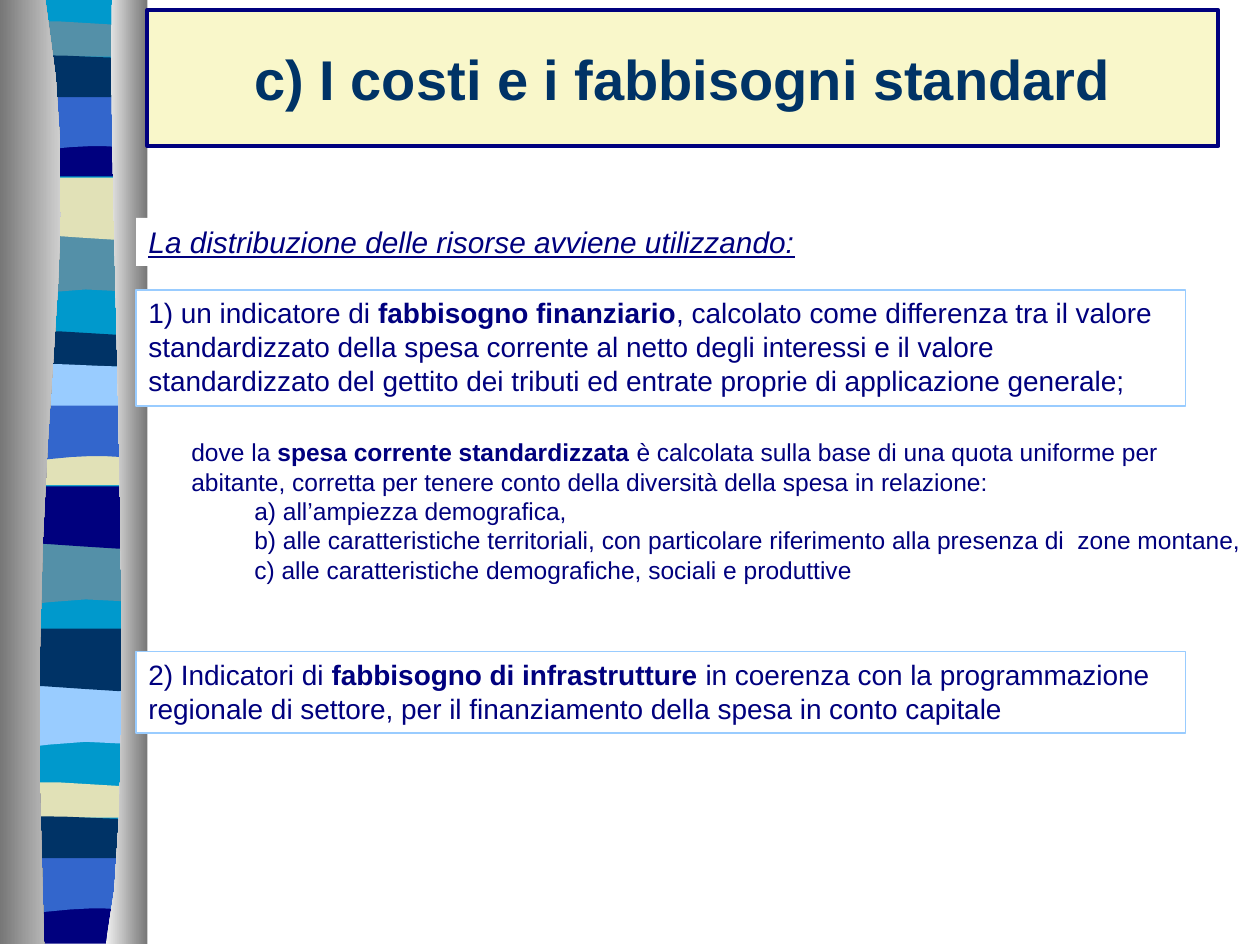
from pptx import Presentation
from pptx.dml.color import RGBColor
from pptx.enum.text import MSO_ANCHOR as Anchor, MSO_AUTO_SIZE as AutoSize, PP_ALIGN as Align
from pptx.util import Inches, Pt

NAVY, DEEP, BLUE, SKY = "00007E", "003366", "3366CC", "99CCFF"
TEAL, SAND, CYAN = "5490A8", "E1E1B7", "0099CC"
WHITE, CREAM = "FFFFFF", "F9F7CA"
DARK_GREY, LIGHT_GREY, PALE_GREY = "777777", "CFCFCF", "F0F0F0"

LEFT, RIGHT = 0.05, 1.14
BOWL_TOP = (0.72, 0.05, 0.91, 0, RIGHT, 0)
WAVES = {
    "sag": [(RIGHT, 0.47), (0.39, 0.39, 0.24, 0.55, LEFT, 0.47), (LEFT, 0)],
    "roll": [(RIGHT, 0.47), (0.96, 0.55, 0.39, 0.41, LEFT, 0.47), (LEFT, 0)],
    "cap": [(RIGHT, 0.24), (LEFT, 0.24), (LEFT, 0),
            (0.12, -0.05, 0.29, -0.04, 0.47, -0.04), (RIGHT, 0)],
    "bowl": [(RIGHT, 0.32), (LEFT, 0.32), (LEFT, 0), BOWL_TOP],
    "arch": [(RIGHT, 0.47), (0.97, 0.42, 0.9, 0.42, 0.72, 0.42),
             (0.54, 0.42, 0.22, 0.47, LEFT, 0.47), (LEFT, 0)],
    "drift": [(RIGHT, 0.31), (LEFT, 0.31), (LEFT, 0),
              (0.21, -0.05, 0.79, 0, 0.97, 0), (RIGHT, 0)],
    "base": [(RIGHT, 0.37), (LEFT, 0.37), (LEFT, 0), BOWL_TOP],
    "backing": [(RIGHT, 7.47), (LEFT, 7.47), (LEFT, 0)],
}
BANDS = [
    ("backing", 0, CYAN),
    ("sag", 1.85, TEAL), ("roll", 1.41, SAND), ("cap", 0.21, TEAL),
    ("bowl", 1.08, NAVY), ("arch", 0.74, BLUE), ("drift", 0.46, DEEP),
    ("sag", 4.31, TEAL), ("roll", 3.86, NAVY), ("cap", 2.67, DEEP),
    ("bowl", 3.53, SAND), ("arch", 3.2, BLUE), ("drift", 2.91, SKY),
    ("sag", 5.44, SKY), ("roll", 4.99, DEEP), ("cap", 6.25, SAND),
    ("base", 7.12, NAVY), ("arch", 6.79, BLUE), ("drift", 6.5, DEEP),
]


def color(hex_code):
    return RGBColor.from_string(hex_code)


def write(para, text, size=16, hue=NAVY, bold=False, italic=False, underline=False):
    span = para.add_run()
    span.text = text
    font = span.font
    font.name, font.size, font.color.rgb = "Arial", Pt(size), color(hue)
    font.bold, font.italic, font.underline = bold, italic, underline


def trace(start, segments, steps):
    points = [start]
    for segment in segments:
        if len(segment) == 2:
            points.append(segment)
            continue
        x0, y0 = points[-1]
        x1, y1, x2, y2, x3, y3 = segment
        for step in range(1, steps + 1):
            t = step / steps
            s = 1 - t
            a, b, c, d = s ** 3, 3 * s * s * t, 3 * s * t * t, t ** 3
            points.append((a * x0 + b * x1 + c * x2 + d * x3,
                           a * y0 + b * y1 + c * y2 + d * y3))
    return points


class Slide:
    def __init__(self, deck):
        self.page = deck.slides.add_slide(deck.slide_layouts[5])

    def outline(self, start, segments, top=0, steps=4):
        points = [(Inches(x), Inches(y + top)) for x, y in trace(start, segments, steps)]
        builder = self.page.shapes.build_freeform(*points[0], scale=1.0)
        builder.add_line_segments(points[1:], close=True)
        shape = builder.convert_to_shape()
        shape.shadow.inherit = False
        shape.line.fill.background()
        return shape

    def band(self, wave, top, hue):
        shape = self.outline((RIGHT, 0), WAVES[wave], top)
        self.paint(shape, hue)

    def pillar(self, start, segments, hues):
        fill = self.outline(start, segments, steps=10).fill
        fill.gradient()
        fill.gradient_angle = 0
        for stop, hue in zip(fill.gradient_stops, hues):
            stop.color.rgb = color(hue)

    def paint(self, shape, hue, line=None, width=1):
        shape.fill.solid()
        shape.fill.fore_color.rgb = color(hue)
        if line:
            shape.line.color.rgb = color(line)
            shape.line.width = Pt(width)

    def title(self, text, place):
        box = self.page.shapes.title
        box.left, box.top, box.width, box.height = map(Inches, place)
        box.element.getparent().append(box.element)
        self.paint(box, CREAM, NAVY, 2.25)
        frame = box.text_frame
        frame.vertical_anchor = Anchor.MIDDLE
        frame.paragraphs[0].alignment = Align.CENTER
        write(frame.paragraphs[0], text, size=32, hue=DEEP, bold=True)

    def text(self, place, paragraphs, line=None, **style):
        box = self.page.shapes.add_textbox(*map(Inches, place))
        self.paint(box, WHITE, line)
        frame = box.text_frame
        frame.word_wrap = True
        frame.auto_size = AutoSize.SHAPE_TO_FIT_TEXT
        for index, (level, spans) in enumerate(paragraphs):
            para = frame.add_paragraph() if index else frame.paragraphs[0]
            para.level = level
            for position, words in enumerate(spans):
                write(para, words, bold=position == 1, **style)


def main():
    deck = Presentation()
    deck.slide_width, deck.slide_height = Inches(10), Inches(7.5)
    slide = Slide(deck)

    for band in BANDS:
        slide.band(*band)
    slide.pillar((0.36, 0), [(0.72, 2.16, 0.17, 2.96, 0.35, 7.49), (0, 7.49), (0, 0)],
                 (DARK_GREY, LIGHT_GREY))
    slide.pillar((0.89, 0), [(0.84, 1.25, 1.12, 6.46, 0.84, 7.49), (1.17, 7.49), (1.17, 0)],
                 (PALE_GREY, DARK_GREY))

    slide.title("c) I costi e i fabbisogni standard", (1.17, 0.08, 8.5, 1.08))
    slide.text((1.08, 1.73, 5.58, 0.38),
               [(0, ["La distribuzione delle risorse avviene utilizzando:"])],
               size=17, italic=True, underline=True)
    slide.text((1.08, 2.3, 8.33, 0.92), [(0, [
        "1) un indicatore di ",
        "fabbisogno finanziario",
        ", calcolato come differenza tra il valore standardizzato della spesa corrente "
        "al netto degli interessi e il valore standardizzato del gettito dei tributi "
        "ed entrate proprie di applicazione generale;"])], line=SKY)
    slide.text((1.42, 3.42, 8.58, 1.26), [
        (0, ["dove la ",
             "spesa corrente standardizzata ",
             "è calcolata sulla base di una quota uniforme per abitante, corretta per "
             "tenere conto della diversità della spesa in relazione:"]),
        (1, ["a) all’ampiezza demografica,"]),
        (1, ["b) alle caratteristiche territoriali, con particolare riferimento "
             "alla presenza di  zone montane,"]),
        (1, ["c) alle caratteristiche demografiche, sociali e produttive"]),
    ], size=14)
    slide.text((1.08, 5.17, 8.33, 0.65), [(0, [
        "2) Indicatori di ",
        "fabbisogno di infrastrutture ",
        "in coerenza con la programmazione regionale di settore, "
        "per il finanziamento della spesa in conto capitale"])], line=SKY)

    deck.save("out.pptx")


if __name__ == "__main__":
    main()
